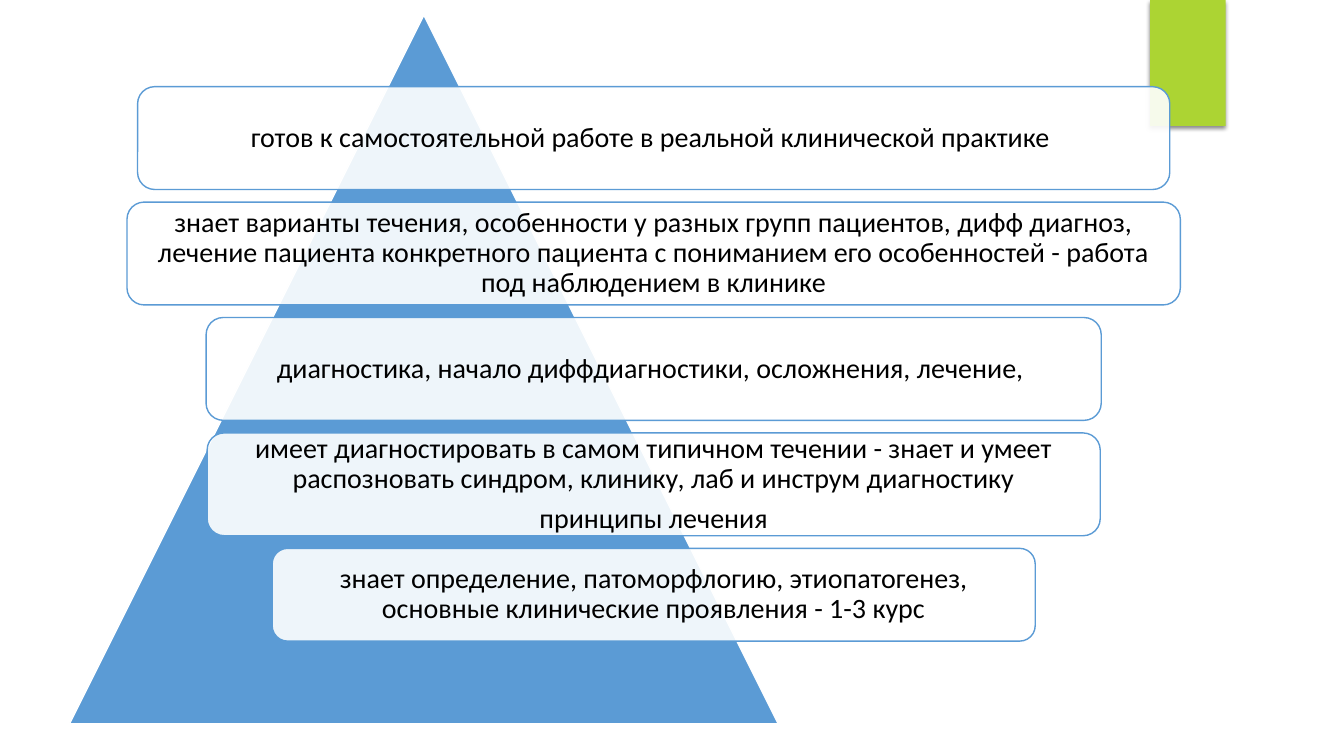
from lxml.etree import SubElement
from pptx import Presentation
from pptx.dml.color import RGBColor
from pptx.enum.shapes import MSO_SHAPE
from pptx.enum.text import MSO_ANCHOR, PP_ALIGN
from pptx.oxml.ns import qn
from pptx.util import Inches, Pt

COLORS = {"white": "FFFFFF", "black": "000000", "blue": "5B9BD5", "green": "ACD433"}
COLUMNS, ROWS = 160, 90

CENTER = 77.82
FIRST_TOP = 10.32
GAP = 1.5
LEVELS = [
    (122.88, 12.24, "готов к самостоятельной работе в реальной клинической практике "),
    (125.4, 12.24, "знает варианты течения, особенности у разных групп пациентов, дифф диагноз, "
     "лечение пациента конкретного пациента с пониманием его особенностей - "
     "работа под наблюдением в клинике"),
    (106.56, 12.24, "диагностика, начало диффдиагностики, осложнения, лечение, "),
    (106.32, 12.24, "имеет диагностировать в самом типичном течении - знает и умеет "
     "распозновать синдром, клинику, лаб и инструм диагностику\nпринципы лечения"),
    (90.84, 11.04, "знает определение, патоморфлогию, этиопатогенез, "
     "основные клинические проявления - 1-3 курс"),
]


class SlideBuilder:
    font = "Calibri"
    size = Pt(20)
    inset = Inches(0.13)

    def __init__(self, prs):
        self.slide = prs.slides.add_slide(prs.slide_layouts[6])
        self.column = prs.slide_width / COLUMNS
        self.row = prs.slide_height / ROWS

    def color(self, name):
        return RGBColor.from_string(COLORS[name])

    def shape(self, kind, left, top, width, height, fill, line=None):
        sp = self.slide.shapes.add_shape(
            kind, round(left * self.column), round(top * self.row),
            round(width * self.column), round(height * self.row))
        sp.shadow.inherit = False
        sp.fill.solid()
        sp.fill.fore_color.rgb = self.color(fill)
        if line:
            sp.line.color.rgb = self.color(line)
            sp.line.width = Pt(1)
        else:
            sp.line.fill.background()
        return sp

    def tab(self, left, top, width, height):
        sp = self.shape(MSO_SHAPE.RECTANGLE, left, top, width, height, "green")
        effects = sp.element.spPr.find(qn("a:effectLst"))
        shadow = SubElement(effects, qn("a:outerShdw"), blurRad=str(Pt(3)),
                            dist=str(Pt(2)), dir="5400000", rotWithShape="0")
        tint = SubElement(shadow, qn("a:srgbClr"), val=COLORS["black"])
        SubElement(tint, qn("a:alpha"), val="45000")

    def pyramid(self, left, top, side):
        self.shape(MSO_SHAPE.ISOSCELES_TRIANGLE, left, top, side, side, "blue", "white")

    def level(self, top, width, height, text):
        sp = self.shape(MSO_SHAPE.ROUNDED_RECTANGLE, CENTER - width / 2, top,
                        width, height, "white", "blue")
        tint = sp.element.spPr.find(qn("a:solidFill"))[0]
        SubElement(tint, qn("a:alpha"), val="90000")
        tf = sp.text_frame
        tf.word_wrap = True
        tf.vertical_anchor = MSO_ANCHOR.MIDDLE
        tf.margin_left = tf.margin_right = self.inset
        tf.margin_top = tf.margin_bottom = self.inset
        tf.text = text
        for p in tf.paragraphs:
            p.alignment = PP_ALIGN.CENTER
            p.line_spacing = 0.9
            p.space_after = Pt(7)
            for r in p.runs:
                r.font.name = self.font
                r.font.size = self.size
                r.font.color.rgb = self.color("black")


def main():
    prs = Presentation()
    prs.slide_width, prs.slide_height = Inches(13.33), Inches(7.5)
    s = SlideBuilder(prs)
    s.tab(136.92, 0, 9, 15)
    s.pyramid(8.28, 1.8, 84.36)
    top = FIRST_TOP
    for width, height, text in LEVELS:
        s.level(top, width, height, text)
        top += height + GAP
    prs.save("out.pptx")


if __name__ == "__main__":
    main()
